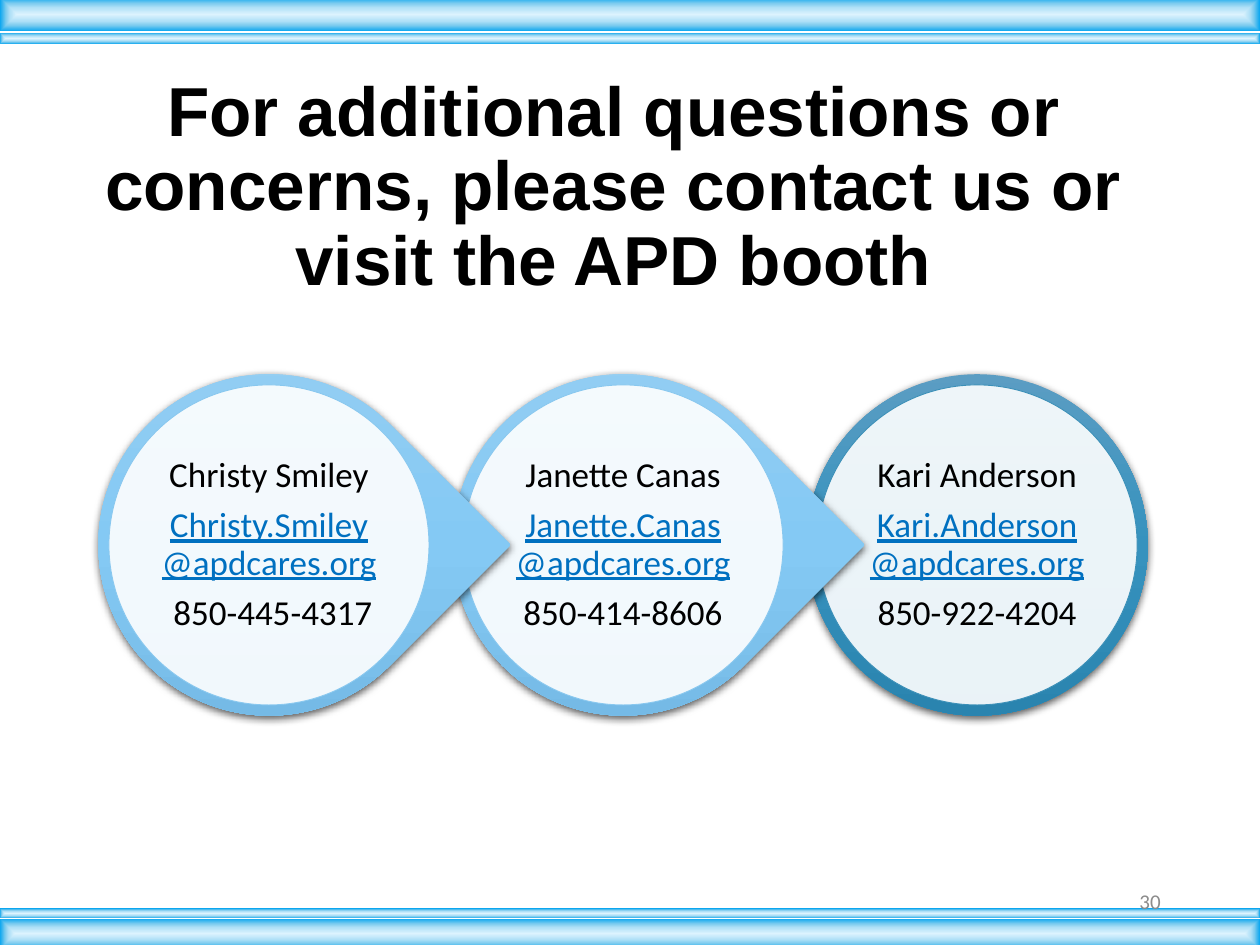
import pptx
import pptx.util
import pptx.dml.color
import pptx.enum.shapes
import pptx.enum.text
import pptx.oxml
import pptx.oxml.ns

Inches, Pt = pptx.util.Inches, pptx.util.Pt
RGBColor = pptx.dml.color.RGBColor
KIND = pptx.enum.shapes.MSO_SHAPE
ALIGN = pptx.enum.text.PP_ALIGN
MIDDLE = pptx.enum.text.MSO_ANCHOR.MIDDLE

BLACK = RGBColor(0, 0, 0)
WHITE = RGBColor(255, 255, 255)
GRAY = RGBColor(0x8C, 0x8C, 0x8C)
EMAIL_BLUE = RGBColor(0x00, 0x70, 0xC0)
SKY_EDGE = RGBColor(0x89, 0xC8, 0xEF)
TEAL_EDGE = RGBColor(0x3C, 0x90, 0xB8)


def stops(*pairs):
    return [(position, RGBColor.from_string(color)) for position, color in pairs]


SKY = stops((0, "98CFF2"), (50, "84C9F4"), (100, "6FB4E0"))
TEAL = stops((0, "5B9DC3"), (50, "3692BE"), (100, "2A84AF"))
BAR = stops((0, "DCF3FE"), (40, "AFE0F7"), (64, "7ECCEF"), (100, "08A5EF"))
DOWNWARD = '<a:lin ang="5400000" scaled="0"/>'
FROM_CENTER = '<a:path path="rect"><a:fillToRect l="50000" t="50000" r="50000" b="50000"/></a:path>'

HEADING = "For additional questions or concerns, please contact us or visit the APD booth"
PAGE_NUMBER = "30"
CONTACTS = [
    ("Christy Smiley", "Christy.Smiley@apdcares.org", " 850-445-4317", KIND.TEAR, SKY, SKY_EDGE),
    ("Janette Canas", "Janette.Canas@apdcares.org", "850-414-8606", KIND.TEAR, SKY, SKY_EDGE),
    ("Kari Anderson", "Kari.Anderson@apdcares.org", "850-922-4204", KIND.OVAL, TEAL, TEAL_EDGE),
]
BARS = [(0.26, 0.09), (-0.02, 0.27), (7.21, 0.08), (7.29, 0.24)]

FIRST_LEFT, TOP, PITCH = 0.78, 2.97, 2.81
DROP, DISC, LABEL = 2.71, 2.54, 1.81

HEADING_FONT = {"name": "Arial", "size": Pt(39.6), "bold": True}
CONTACT_FONT = {"name": "Calibri", "size": Pt(20)}
NUMBER_FONT = {"name": "Calibri", "size": Pt(12)}
CONTACT_FRAME = {f"margin_{side}": Inches(0.03) for side in ("left", "top", "right", "bottom")}


def drawing(body):
    tag, rest = body.split(" ", 1)
    return pptx.oxml.parse_xml(f"{tag} {pptx.oxml.ns.nsdecls('a')} {rest}")


def add_plain(slide, kind, box):
    shape = slide.shapes.add_shape(kind, *map(Inches, box))
    shape.shadow.inherit = False
    shape.line.fill.background()
    return shape


def set_gradient(shape, colors, direction):
    shape.fill.background()
    marks = "".join(
        f'<a:gs pos="{position * 1000}"><a:srgbClr val="{color}"/></a:gs>' for position, color in colors
    )
    gradient = drawing(f'<a:gradFill rotWithShape="0"><a:gsLst>{marks}</a:gsLst>{direction}</a:gradFill>')
    properties = shape._element.spPr
    properties.replace(properties.find(pptx.oxml.ns.qn("a:noFill")), gradient)


def set_shadow(shape):
    effects = shape._element.spPr.find(pptx.oxml.ns.qn("a:effectLst"))
    effects.append(drawing(
        f'<a:outerShdw blurRad="{Pt(4.5)}" dist="{Pt(1.5)}" dir="5400000" rotWithShape="0">'
        '<a:srgbClr val="000000"><a:alpha val="63000"/></a:srgbClr></a:outerShdw>'
    ))


def add_text(slide, box, lines, align, font, frame_format={}, paragraph_format={}):
    frame = slide.shapes.add_textbox(*map(Inches, box)).text_frame
    for key, value in {"word_wrap": True, "vertical_anchor": MIDDLE, **frame_format}.items():
        setattr(frame, key, value)
    for index, (words, color, underline) in enumerate(lines):
        paragraph = frame.add_paragraph() if index else frame.paragraphs[0]
        for key, value in {"alignment": align, **paragraph_format}.items():
            setattr(paragraph, key, value)
        run = paragraph.add_run()
        run.text = words
        for key, value in {**font, "underline": underline}.items():
            setattr(run.font, key, value)
        run.font.color.rgb = color


def centered(left, size):
    inset = (DROP - size) / 2
    return left + inset, TOP + inset, size, size


def add_contact(slide, left, contact):
    name, email, phone, outline, colors, edge = contact
    drop = add_plain(slide, outline, centered(left, DROP))
    if outline == KIND.TEAR:
        drop.adjustments[0] = 1
        drop.rotation = 45
    set_gradient(drop, colors, DOWNWARD)
    set_shadow(drop)

    disc = add_plain(slide, KIND.OVAL, centered(left, DISC))
    disc.fill.solid()
    disc.fill.fore_color.rgb = WHITE
    disc.fill._xPr.solidFill[0].append(drawing('<a:alpha val="90000"/>'))
    disc.line.color.rgb = edge
    disc.line.width = Pt(0.5)

    lines = [(name, BLACK, False), (email, EMAIL_BLUE, True), (phone, BLACK, False)]
    add_text(slide, centered(left, LABEL), lines, ALIGN.CENTER, CONTACT_FONT,
             CONTACT_FRAME, {"line_spacing": 0.9, "space_after": Pt(7)})


def main():
    deck = pptx.Presentation()
    deck.slide_width, deck.slide_height = Inches(10), Inches(7.5)
    slide = deck.slides.add_slide(deck.slide_layouts[6])

    add_text(slide, (0.56, 0.77, 8.62, 1.45), [(HEADING, BLACK, False)], ALIGN.CENTER,
             HEADING_FONT, paragraph_format={"line_spacing": 0.9})
    for index, contact in reversed(list(enumerate(CONTACTS))):
        add_contact(slide, FIRST_LEFT + index * PITCH, contact)
    for top, height in BARS:
        set_gradient(add_plain(slide, KIND.RECTANGLE, (0, top, 10, height)), BAR, FROM_CENTER)
    add_text(slide, (7.06, 6.95, 2.25, 0.4), [(PAGE_NUMBER, GRAY, False)], ALIGN.RIGHT, NUMBER_FONT)

    deck.save("out.pptx")


if __name__ == "__main__":
    main()
